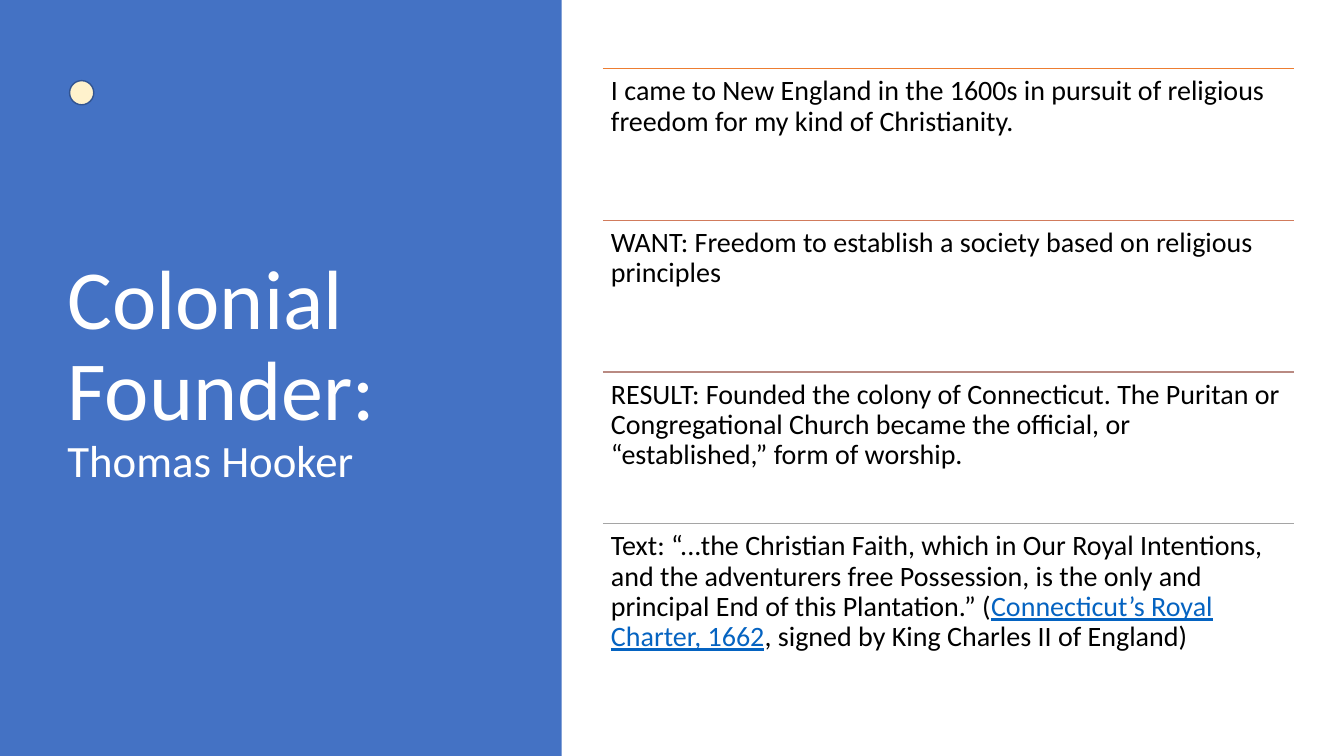
from dataclasses import dataclass

from lxml.etree import SubElement
from pptx import Presentation
from pptx.dml.color import RGBColor
from pptx.enum.shapes import MSO_CONNECTOR as Conn, MSO_SHAPE as Shape
from pptx.enum.text import MSO_ANCHOR as Anchor
from pptx.oxml.ns import qn
from pptx.util import Inches, Pt


@dataclass(frozen=True)
class Theme:
    font: str = "Calibri"
    panel: str = "4472C4"
    dot: str = "FFF2CC"
    dot_edge: str = "325491"
    light: str = "FFFFFF"
    dark: str = "000000"
    link: str = "0563C1"
    rules: tuple = ("ED7D31", "D17B5C", "B98A82", "A5A5A5")
    title_size: int = 60
    name_size: int = 32
    body_size: int = 20


THEME = Theme()
WIDTH, HEIGHT = 13.33, 7.5

# Grid: one column of equal rows to the right of the panel
PANEL_W = 5.57
COL_X, COL_W = 5.98, 6.85
TOP, ROW_COUNT = 0.68, 4
ROW_H = 6.02 / ROW_COUNT

# Each row is a list of (text, is_link) runs
ROWS = [
    [("I came to New England in the 1600s in pursuit of religious freedom "
      "for my kind of Christianity.", False)],
    [("WANT: Freedom to establish a society based on religious principles", False)],
    [("RESULT: Founded the colony of Connecticut. The Puritan or Congregational "
      "Church became the official, or “established,” form of worship.", False)],
    [("Text: “...the Christian Faith, which in Our Royal Intentions, and the "
      "adventurers free Possession, is the only and principal End of this "
      "Plantation.” (", False),
     ("Connecticut’s Royal Charter, 1662", True),
     (", signed by King Charles II of England)", False)],
]


def rgb(code):
    return RGBColor.from_string(code)


def add_filled(s, kind, box, fill, edge=None):
    sp = s.shapes.add_shape(kind, *map(Inches, box))
    sp.shadow.inherit = False
    sp.fill.solid()
    sp.fill.fore_color.rgb = rgb(fill)
    if edge:
        sp.line.color.rgb = rgb(edge)
        sp.line.width = Pt(1)
    else:
        sp.line.fill.background()


def add_text(s, box, runs, inset, anchor=Anchor.TOP):
    """Runs are (text, size, colour, underline)."""
    tf = s.shapes.add_textbox(*map(Inches, box)).text_frame
    tf.word_wrap = True
    tf.vertical_anchor = anchor
    tf.margin_left = tf.margin_right = Inches(inset)
    tf.margin_top = tf.margin_bottom = Inches(min(inset, 0.08))
    p = tf.paragraphs[0]
    p.line_spacing = 0.9
    for text, size, color, underline in runs:
        r = p.add_run()
        r.text = text
        r.font.name = THEME.font
        r.font.size = Pt(size)
        r.font.color.rgb = rgb(color)
        r.font.underline = underline


def add_rule(s, x, y, width, color):
    line = s.shapes.add_connector(
        Conn.STRAIGHT, Inches(x), Inches(y), Inches(x + width), Inches(y))
    line.line.color.rgb = rgb(color)
    line.line.width = Pt(1)
    SubElement(line._element.spPr, qn("a:effectLst"))


def add_row(s, index, parts):
    y = TOP + index * ROW_H
    add_rule(s, COL_X, y, COL_W, THEME.rules[index])
    runs = [(text, THEME.body_size, THEME.link if linked else THEME.dark, linked)
            for text, linked in parts]
    add_text(s, (COL_X, y, COL_W, ROW_H), runs, 0.08)


def main():
    prs = Presentation()
    prs.slide_width, prs.slide_height = Inches(WIDTH), Inches(HEIGHT)
    s = prs.slides.add_slide(prs.slide_layouts[6])

    # Title panel
    add_filled(s, Shape.RECTANGLE, (0, 0, PANEL_W, HEIGHT), THEME.panel)
    title = [("Colonial Founder: ", THEME.title_size, THEME.light, False),
             ("Thomas Hooker", THEME.name_size, THEME.light, False)]
    add_text(s, (0.57, TOP, 4.16, ROW_H * ROW_COUNT), title, 0.1, Anchor.MIDDLE)

    # Ruled statements
    for index, parts in enumerate(ROWS):
        add_row(s, index, parts)

    # Accent dot
    add_filled(s, Shape.OVAL, (0.69, 0.8, 0.24, 0.24), THEME.dot, THEME.dot_edge)

    prs.save("out.pptx")


if __name__ == "__main__":
    main()
